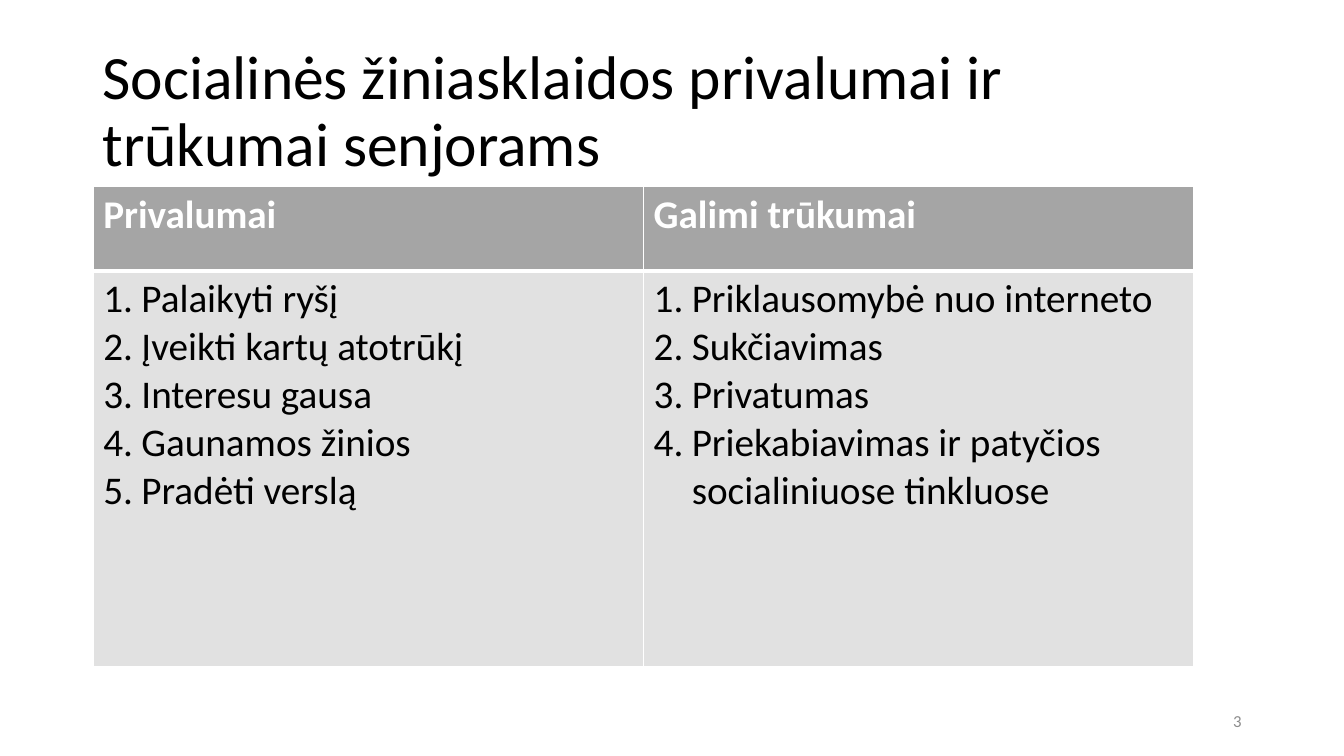
from lxml.etree import SubElement
from pptx import Presentation
from pptx.dml.color import RGBColor
from pptx.enum.text import MSO_ANCHOR, MSO_AUTO_SIZE, PP_ALIGN
from pptx.oxml.ns import qn
from pptx.util import Cm, Pt

COLORS = {
    "text": "000000",
    "white": "FFFFFF",
    "header": "A5A5A5",
    "body": "E1E1E1",
    "number": "8C8C8C",
}
COLUMNS = {
    "Privalumai": [
        "Palaikyti ryšį",
        "Įveikti kartų atotrūkį",
        "Interesu gausa",
        "Gaunamos žinios",
        "Pradėti verslą",
    ],
    "Galimi trūkumai": [
        "Priklausomybė nuo interneto",
        "Sukčiavimas",
        "Privatumas",
        "Priekabiavimas ir patyčios socialiniuose tinkluose",
    ],
}


def style_font(paragraph, size, color, bold=False):
    paragraph.font.name = "Calibri"
    paragraph.font.size = Pt(size)
    paragraph.font.bold = bold
    paragraph.font.color.rgb = RGBColor.from_string(COLORS[color])


def style_cell(cell, fill, top, bottom):
    properties = cell._tc.get_or_add_tcPr()
    for side, width in {"L": 1, "R": 1, "T": top, "B": bottom}.items():
        border = SubElement(properties, qn(f"a:ln{side}"), w=str(Pt(width)))
        border_fill = SubElement(border, qn("a:solidFill"))
        SubElement(border_fill, qn("a:srgbClr"), val=COLORS["white"])
    cell.fill.solid()
    cell.fill.fore_color.rgb = RGBColor.from_string(COLORS[fill])


presentation = Presentation()
presentation.slide_width = Cm(33.87)
presentation.slide_height = Cm(19.05)
slide = presentation.slides.add_slide(presentation.slide_layouts[5])

title = slide.shapes.title
title.left, title.top, title.width, title.height = Cm(2.33), Cm(1.01), Cm(29.21), Cm(3.68)
title.text_frame.text = "Socialinės žiniasklaidos privalumai ir trūkumai senjorams"
title.text_frame.auto_size = MSO_AUTO_SIZE.NONE
title.text_frame.vertical_anchor = MSO_ANCHOR.MIDDLE
heading = title.text_frame.paragraphs[0]
heading.alignment = PP_ALIGN.LEFT
heading.line_spacing = 0.9
style_font(heading, 44, "text")

comparison = slide.shapes.add_table(
    2, len(COLUMNS), Cm(2.35), Cm(4.7), Cm(27.74), Cm(12.1)
).table
comparison.rows[0].height = Cm(2.12)
comparison.rows[1].height = Cm(9.98)

for column, (header, points) in enumerate(COLUMNS.items()):
    header_cell = comparison.cell(0, column)
    header_cell.text = header
    style_font(header_cell.text_frame.paragraphs[0], 28, "white", bold=True)
    style_cell(header_cell, "header", 1, 3)

    points_cell = comparison.cell(1, column)
    points_cell.text = "\n".join(points)
    for point in points_cell.text_frame.paragraphs:
        style_font(point, 28, "text")
        numbering = point._p.get_or_add_pPr()
        numbering.set("marL", str(Cm(0.96)))
        numbering.set("indent", str(-Cm(0.96)))
        bullet = numbering.makeelement(qn("a:buAutoNum"), {"type": "arabicPeriod"})
        numbering.insert(0, bullet)
    style_cell(points_cell, "body", 3, 1)

page_number = slide.shapes.add_textbox(Cm(23.92), Cm(17.66), Cm(7.62), Cm(1.01)).text_frame
page_number.word_wrap = True
page_number.vertical_anchor = MSO_ANCHOR.MIDDLE
page_number.text = "3"
page_number.paragraphs[0].alignment = PP_ALIGN.RIGHT
style_font(page_number.paragraphs[0], 12, "number")

presentation.save("out.pptx")
